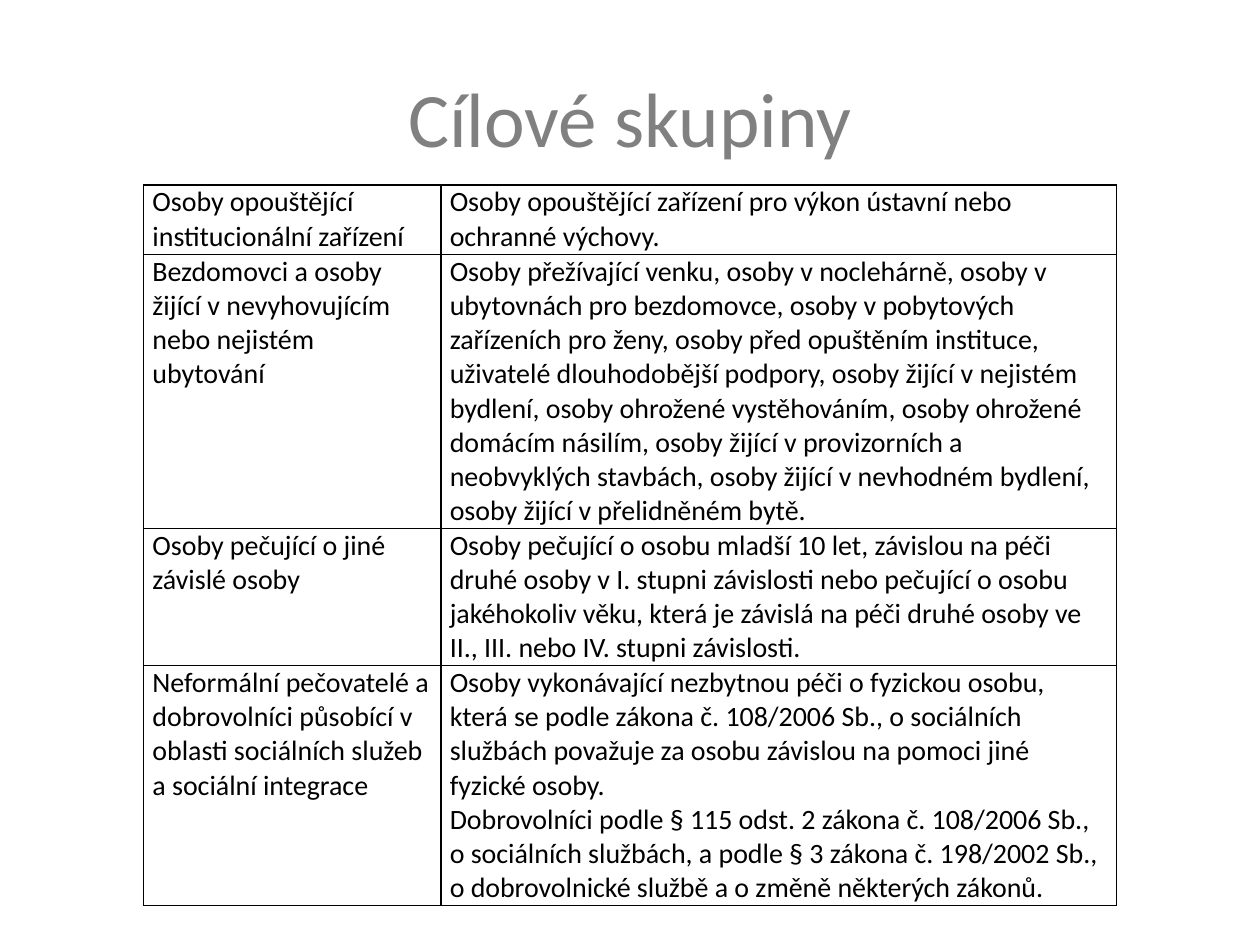
"""Build the slide with the table of target groups."""
from dataclasses import dataclass

from lxml import etree
from pptx import Presentation
from pptx.dml.color import RGBColor
from pptx.enum.text import MSO_ANCHOR, PP_ALIGN
from pptx.oxml.ns import qn
from pptx.util import Inches, Pt

CENTER = PP_ALIGN.CENTER
LEFT = PP_ALIGN.LEFT
MIDDLE = MSO_ANCHOR.MIDDLE
TOP = MSO_ANCHOR.TOP
GRAY = RGBColor(0x80, 0x80, 0x80)
BLACK = RGBColor(0x00, 0x00, 0x00)
FONT = "Calibri"
TITLE_ONLY = 5
COLUMN_WIDTHS = (2.36, 5.36)


@dataclass
class TargetGroup:
    """One table row: a group, its definition and the row height in inches."""
    name: str
    definition: tuple[str, ...]
    height: float


GROUPS = (
    TargetGroup(
        "Osoby opouštějící institucionální zařízení",
        ("Osoby opouštějící zařízení pro výkon ústavní nebo ochranné výchovy.",),
        0.55,
    ),
    TargetGroup(
        "Bezdomovci a osoby žijící v nevyhovujícím nebo nejistém ubytování",
        ("Osoby přežívající venku, osoby v noclehárně, osoby v ubytovnách pro "
         "bezdomovce, osoby v pobytových zařízeních pro ženy, osoby před opuštěním "
         "instituce, uživatelé dlouhodobější podpory, osoby žijící v nejistém bydlení, "
         "osoby ohrožené vystěhováním, osoby ohrožené domácím násilím, osoby žijící "
         "v provizorních a neobvyklých stavbách, osoby žijící v nevhodném bydlení, "
         "osoby žijící v přelidněném bytě.",),
        2.17,
    ),
    TargetGroup(
        "Osoby pečující o jiné závislé osoby",
        ("Osoby pečující o osobu mladší 10 let, závislou na péči druhé osoby v I. "
         "stupni závislosti nebo pečující o osobu jakéhokoliv věku, která je závislá "
         "na péči druhé osoby ve II., III. nebo IV. stupni závislosti.",),
        1.09,
    ),
    TargetGroup(
        "Neformální pečovatelé a dobrovolníci působící v oblasti sociálních služeb "
        "a sociální integrace",
        ("Osoby vykonávající nezbytnou péči o fyzickou osobu, která se podle zákona "
         "č. 108/2006 Sb., o sociálních službách považuje za osobu závislou na pomoci "
         "jiné fyzické osoby.",
         "Dobrovolníci podle § 115 odst. 2 zákona č. 108/2006 Sb., o sociálních "
         "službách, a podle § 3 zákona č. 198/2002 Sb., o dobrovolnické službě a "
         "o změně některých zákonů."),
        1.9,
    ),
)


def write_text(frame, lines: tuple[str, ...], size: float, color: RGBColor, align) -> None:
    """Write one formatted paragraph for each line."""
    for index, line in enumerate(lines):
        para = frame.add_paragraph() if index else frame.paragraphs[0]
        para.alignment = align
        span = para.add_run()
        span.text = line
        span.font.name = FONT
        span.font.size = Pt(size)
        span.font.color.rgb = color


def add_borders(cell) -> None:
    """Draw a thin black line on every side of the cell."""
    properties = cell._tc.get_or_add_tcPr()
    for position, side in enumerate(("a:lnL", "a:lnR", "a:lnT", "a:lnB")):
        line = etree.Element(qn(side), w=str(Pt(1)))
        fill = etree.SubElement(line, qn("a:solidFill"))
        etree.SubElement(fill, qn("a:srgbClr"), val=str(BLACK))
        properties.insert(position, line)


def fill_cell(cell, lines: tuple[str, ...]) -> None:
    """Format one cell and write its paragraphs."""
    cell.margin_left = cell.margin_right = Inches(0.07)
    cell.margin_top = cell.margin_bottom = 0
    cell.vertical_anchor = TOP
    cell.fill.background()
    add_borders(cell)
    write_text(cell.text_frame, lines, 16, BLACK, LEFT)


def add_title(page, text: str) -> None:
    """Place and format the slide title."""
    title = page.shapes.title
    title.left, title.top = Inches(0.5), Inches(0.3)
    title.width, title.height = Inches(9), Inches(1.25)
    title.text_frame.vertical_anchor = MIDDLE
    write_text(title.text_frame, (text,), 44, GRAY, CENTER)


def add_group_table(page, groups: tuple[TargetGroup, ...]) -> None:
    """Add the table with one row for each target group."""
    table = page.shapes.add_table(
        len(groups), len(COLUMN_WIDTHS), Inches(1.14), Inches(1.47),
        Inches(sum(COLUMN_WIDTHS)), Inches(sum(group.height for group in groups)),
    ).table
    table.first_row = table.horz_banding = False
    for column, width in zip(table.columns, COLUMN_WIDTHS):
        column.width = Inches(width)
    for row, group in zip(table.rows, groups):
        row.height = Inches(group.height)
        for cell, lines in zip(row.cells, ((group.name,), group.definition)):
            fill_cell(cell, lines)


def main() -> None:
    """Create and save the deck."""
    deck = Presentation()
    deck.slide_width, deck.slide_height = Inches(10), Inches(7.5)
    page = deck.slides.add_slide(deck.slide_layouts[TITLE_ONLY])
    add_title(page, "Cílové skupiny")
    add_group_table(page, GROUPS)
    deck.save("out.pptx")


if __name__ == "__main__":
    main()
